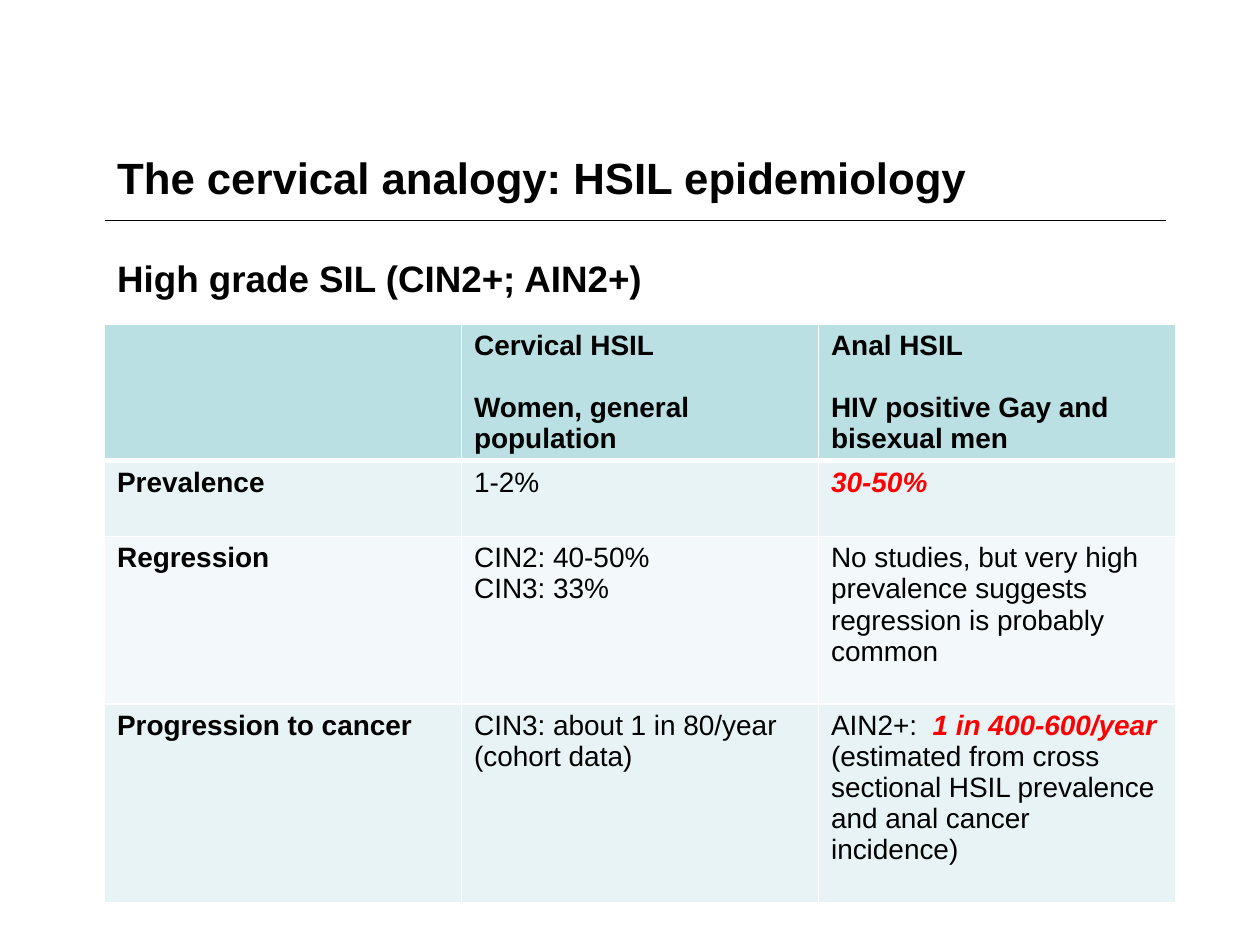
from dataclasses import dataclass

from lxml.etree import SubElement
from pptx import Presentation
from pptx.dml.color import RGBColor
from pptx.enum.shapes import MSO_CONNECTOR
from pptx.enum.text import MSO_ANCHOR, MSO_AUTO_SIZE, PP_ALIGN
from pptx.oxml import parse_xml
from pptx.oxml.ns import nsdecls, qn
from pptx.util import Inches, Pt


@dataclass(frozen=True)
class Theme:
    font: str = "Arial"
    ink: str = "000000"
    accent: str = "FF0000"
    border: str = "FFFFFF"
    header: str = "BBE0E3"
    bands: tuple = ("E7F3F4", "F3F9FA")
    title_size: int = 25
    subtitle_size: int = 21
    table_size: int = 16
    header_gap: float = 17.7


THEME = Theme()

# Each cell is a list of paragraphs, each paragraph a list of (text, emphasised)
HEADERS = [
    [],
    [[("Cervical HSIL", False)], [("Women, general population", False)]],
    [[("Anal HSIL", False)], [("HIV positive Gay and bisexual men", False)]],
]
ROWS = [
    [[[("Prevalence", False)]], [[("1-2%", False)]], [[("30-50%", True)]]],
    [
        [[("Regression", False)]],
        [[("CIN2: 40-50%", False)], [("CIN3: 33%", False)]],
        [[("No studies, but very high prevalence suggests regression is "
           "probably common", False)]],
    ],
    [
        [[("Progression to cancer", False)]],
        [[("CIN3: about 1 in 80/year (cohort data)", False)]],
        [[("AIN2+: ", False), (" 1 in 400-600/year ", True),
          ("(estimated from cross sectional HSIL prevalence and anal cancer "
           "incidence)", False)]],
    ],
]
ROW_HEIGHTS = [1.08, 0.6, 1.33, 1.58]


def style_font(font, size, bold=False, color=THEME.ink):
    font.name = THEME.font
    font.size = Pt(size)
    font.bold = bold
    font.color.rgb = RGBColor.from_string(color)


def fill_heading(holder, box, text, size):
    """Place a bold, left-aligned heading in a placeholder."""
    holder.left, holder.top, holder.width, holder.height = map(Inches, box)
    frame = holder.text_frame
    frame.text = text
    frame.word_wrap = True
    frame.auto_size = MSO_AUTO_SIZE.NONE
    frame.vertical_anchor = MSO_ANCHOR.TOP
    frame.margin_top = Inches(0.09)
    para = frame.paragraphs[0]
    para.alignment = PP_ALIGN.LEFT
    para.space_before = Pt(0)
    style_font(para.font, size, bold=True)


def add_rule(page, left, top, width):
    """Draw the thin line under the title."""
    rule = page.shapes.add_connector(
        MSO_CONNECTOR.STRAIGHT, Inches(left), Inches(top),
        Inches(left + width), Inches(top))
    rule.line.color.rgb = RGBColor.from_string(THEME.ink)
    rule.line.width = Pt(0.75)
    SubElement(rule._element.spPr, qn("a:effectLst"))


def set_borders(cell, top, bottom):
    """Give a cell white borders; top and bottom are widths in points."""
    properties = cell._tc.get_or_add_tcPr()
    sides = {"lnL": 1, "lnR": 1, "lnT": top, "lnB": bottom}
    for index, (side, width) in enumerate(sides.items()):
        properties.insert(index, parse_xml(
            f'<a:{side} {nsdecls("a")} w="{Pt(width)}"><a:solidFill>'
            f'<a:srgbClr val="{THEME.border}"/></a:solidFill></a:{side}>'))


def fill_cell(cell, paragraphs, bold, gap):
    frame = cell.text_frame
    for index, spans in enumerate(paragraphs):
        para = frame.add_paragraph() if index else frame.paragraphs[0]
        para.space_before = Pt(gap if index else 0)
        style_font(para.font, THEME.table_size, bold)
        for text, emphasised in spans:
            span = para.add_run()
            span.text = text
            if emphasised:
                style_font(span.font, THEME.table_size, True, THEME.accent)
                span.font.italic = True


def add_comparison_table(page, left, top, width):
    """Build the cervical and anal HSIL comparison."""
    content = [HEADERS] + ROWS
    table = page.shapes.add_table(
        len(content), len(HEADERS), Inches(left), Inches(top),
        Inches(width), Inches(sum(ROW_HEIGHTS))).table
    for row, height in zip(table.rows, ROW_HEIGHTS):
        row.height = Inches(height)
    for r, cells in enumerate(content):
        is_header = r == 0
        color = THEME.header if is_header else THEME.bands[(r - 1) % 2]
        for c, paragraphs in enumerate(cells):
            cell = table.cell(r, c)
            cell.fill.solid()
            cell.fill.fore_color.rgb = RGBColor.from_string(color)
            set_borders(cell, 3 if r == 1 else 1, 3 if is_header else 1)
            fill_cell(cell, paragraphs, is_header or c == 0,
                      THEME.header_gap if is_header else 0)


def main():
    deck = Presentation()
    deck.slide_width, deck.slide_height = Inches(10), Inches(7.5)
    page = deck.slides.add_slide(deck.slide_layouts[0])
    left, width = 0.83, 8.5

    # Title, rule and subtitle
    add_rule(page, left, 1.75, 8.42)
    fill_heading(page.shapes.title, (left, 1.11, width, 0.67),
                 "The cervical analogy: HSIL epidemiology", THEME.title_size)
    fill_heading(page.placeholders[1], (left, 1.94, width, 0.58),
                 "High grade SIL (CIN2+; AIN2+)", THEME.subtitle_size)

    # Comparison table
    add_comparison_table(page, left, 2.57, width)
    deck.save("out.pptx")


if __name__ == "__main__":
    main()
